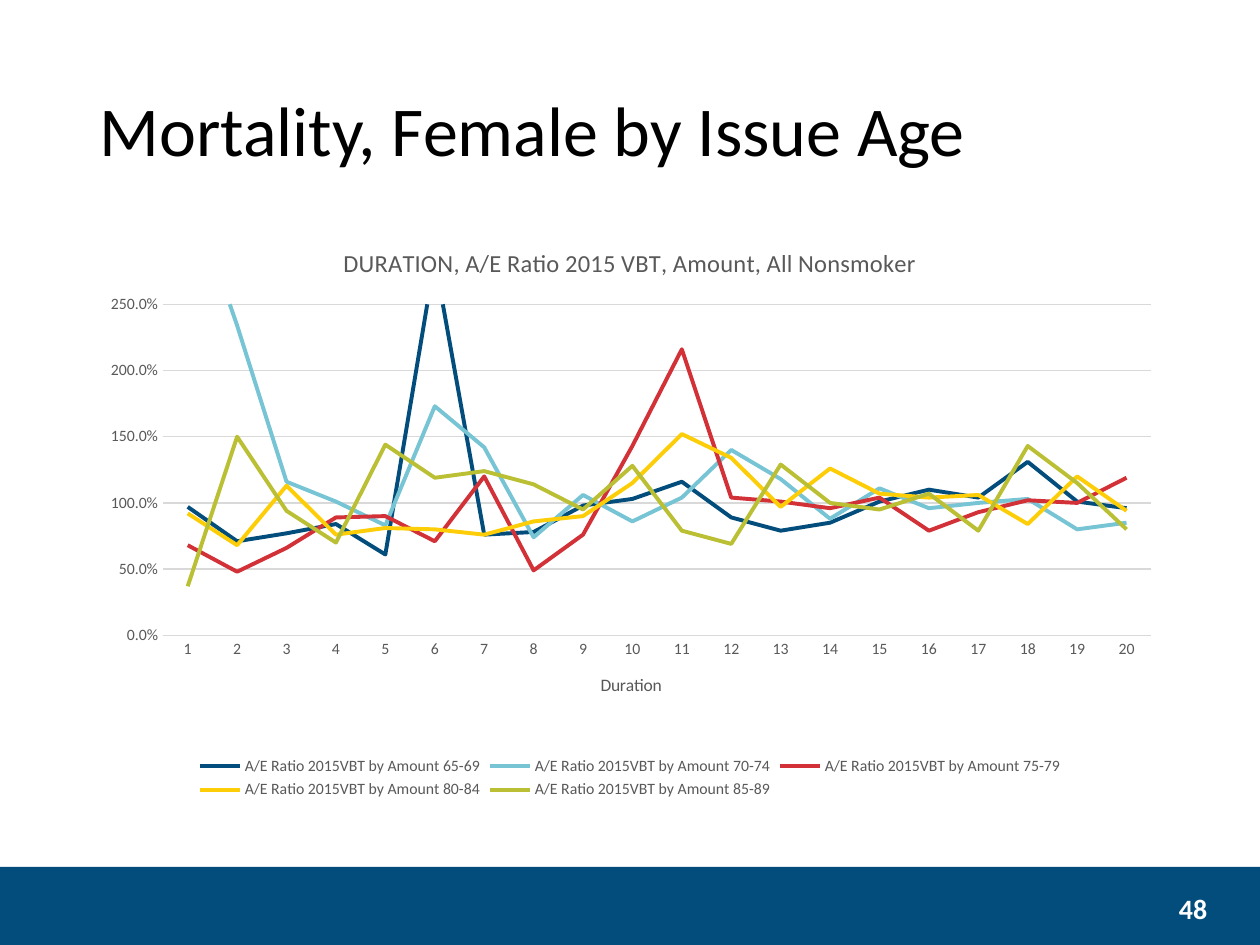
from dataclasses import dataclass

from lxml import etree
from pptx import Presentation
from pptx.chart.data import CategoryChartData
from pptx.dml.color import RGBColor
from pptx.enum.chart import XL_CHART_TYPE, XL_LEGEND_POSITION, XL_TICK_MARK
from pptx.enum.shapes import MSO_SHAPE
from pptx.enum.text import MSO_ANCHOR, PP_ALIGN
from pptx.oxml.ns import qn
from pptx.util import Inches, Pt

LINE = XL_CHART_TYPE.LINE
BOTTOM = XL_LEGEND_POSITION.BOTTOM
NO_TICK = XL_TICK_MARK.NONE
RECTANGLE = MSO_SHAPE.RECTANGLE
MIDDLE = MSO_ANCHOR.MIDDLE
LEFT, RIGHT = PP_ALIGN.LEFT, PP_ALIGN.RIGHT


@dataclass(frozen=True)
class Theme:
    font: str = "Calibri"
    black: str = "000000"
    white: str = "FFFFFF"
    gray: str = "595959"
    grid: str = "D9D9D9"
    navy: str = "024D7C"
    sky: str = "77C4D5"
    red: str = "D23138"
    yellow: str = "FDCE07"
    olive: str = "BABF33"
    title: float = 40
    page_number: float = 16
    chart_title: float = 14
    axis_title: float = 10
    label: float = 9
    series_line: float = 2.25
    thin_line: float = 0.75


THEME = Theme()

TITLE = "Mortality, Female by Issue Age"
PAGE_NUMBER = "48"
CHART_TITLE = "DURATION, A/E Ratio 2015 VBT, Amount, All Nonsmoker"
AXIS_TITLE = "Duration"
SERIES_PREFIX = "A/E Ratio 2015VBT by Amount"
RATIOS_BY_AGE = [
    ("65-69", THEME.navy, [0.97, 0.71, 0.77, 0.84, 0.61, 2.84, 0.76, 0.78, 0.98, 1.03,
                           1.16, 0.89, 0.79, 0.85, 1.01, 1.1, 1.04, 1.31, 1.01, 0.96]),
    ("70-74", THEME.sky, [3.42, 2.34, 1.16, 1.01, 0.83, 1.73, 1.42, 0.74, 1.06, 0.86,
                          1.04, 1.4, 1.18, 0.88, 1.11, 0.96, 1, 1.03, 0.8, 0.85]),
    ("75-79", THEME.red, [0.68, 0.48, 0.66, 0.89, 0.9, 0.71, 1.2, 0.49, 0.76, 1.43,
                          2.16, 1.04, 1.01, 0.96, 1.04, 0.79, 0.93, 1.02, 1, 1.19]),
    ("80-84", THEME.yellow, [0.92, 0.68, 1.13, 0.76, 0.81, 0.8, 0.76, 0.86, 0.9, 1.15,
                             1.52, 1.34, 0.97, 1.26, 1.07, 1.04, 1.06, 0.84, 1.2, 0.94]),
    ("85-89", THEME.olive, [0.37, 1.5, 0.94, 0.7, 1.44, 1.19, 1.24, 1.14, 0.95, 1.28,
                            0.79, 0.69, 1.29, 1, 0.95, 1.07, 0.79, 1.43, 1.15, 0.8]),
]

WIDTH, HEIGHT = 10, 7.5
MARGIN = 0.69
CONTENT_WIDTH = WIDTH - 2 * MARGIN
TITLE_TOP, TITLE_HEIGHT = 0.36, 1.4
CHART_TOP, CHART_HEIGHT = 1.77, 4.61
BAND_TOP = 6.88
NUMBER_BOX = (9.15, 7.1, 0.53, 0.22)
PLOT_SHARES = {"x": 0.07, "y": 0.14, "w": 0.91, "h": 0.57}


def inches(*lengths):
    return [Inches(length) for length in lengths]


def style_font(font, size, color, bold=False):
    font.name, font.size, font.bold = THEME.font, Pt(size), bold
    font.color.rgb = RGBColor.from_string(color)


def style_line(line, color, width):
    line.color.rgb = RGBColor.from_string(color)
    line.width = Pt(width)


def set_chart_text(text_frame, text, size):
    text_frame.text = text
    style_font(text_frame.paragraphs[0].runs[0].font, size, THEME.gray)


def place_plot(chart):
    """Fix the inner plot area as shares of the chart's size."""
    plot_area = chart._chartSpace.chart.plotArea
    for layout in plot_area.findall(qn("c:layout")):
        plot_area.remove(layout)
    layout = etree.Element(qn("c:layout"))
    manual = etree.SubElement(layout, qn("c:manualLayout"))
    settings = {"layoutTarget": "inner", "xMode": "edge", "yMode": "edge", **PLOT_SHARES}
    for name, value in settings.items():
        etree.SubElement(manual, qn(f"c:{name}")).set("val", str(value))
    plot_area.insert(0, layout)


def add_band(slide):
    band = slide.shapes.add_shape(
        RECTANGLE, *inches(0, BAND_TOP, WIDTH, HEIGHT - BAND_TOP))
    band.shadow.inherit = False
    band.fill.solid()
    band.fill.fore_color.rgb = RGBColor.from_string(THEME.navy)
    band.line.fill.background()


def format_title(slide):
    title = slide.shapes.title
    title.left, title.top, title.width, title.height = inches(
        MARGIN, TITLE_TOP, CONTENT_WIDTH, TITLE_HEIGHT)
    title.text_frame.text = TITLE
    title.text_frame.vertical_anchor = MIDDLE
    paragraph = title.text_frame.paragraphs[0]
    paragraph.alignment, paragraph.line_spacing = LEFT, 0.9
    style_font(paragraph.runs[0].font, THEME.title, THEME.black)


def add_page_number(slide):
    text_frame = slide.shapes.add_textbox(*inches(*NUMBER_BOX)).text_frame
    text_frame.word_wrap = True
    text_frame.vertical_anchor = MIDDLE
    text_frame.text = PAGE_NUMBER
    paragraph = text_frame.paragraphs[0]
    paragraph.alignment = RIGHT
    style_font(paragraph.runs[0].font, THEME.page_number, THEME.white, bold=True)


def add_mortality_chart(slide):
    data = CategoryChartData(number_format="0.0%")
    data.categories = [str(duration) for duration in range(1, 21)]
    for age, _, ratios in RATIOS_BY_AGE:
        data.add_series(f"{SERIES_PREFIX} {age}", ratios)
    frame = slide.shapes.add_chart(
        LINE, *inches(MARGIN, CHART_TOP, CONTENT_WIDTH, CHART_HEIGHT), data)
    chart = frame.chart
    style_font(chart.font, THEME.axis_title, THEME.black)
    chart.has_title = True
    set_chart_text(chart.chart_title.text_frame, CHART_TITLE, THEME.chart_title)
    chart.chart_title.include_in_layout = False

    chart.has_legend = True
    chart.legend.position = BOTTOM
    chart.legend.include_in_layout = False
    style_font(chart.legend.font, THEME.label, THEME.gray)

    durations, ratios_axis = chart.category_axis, chart.value_axis
    for axis in (durations, ratios_axis):
        axis.major_tick_mark = axis.minor_tick_mark = NO_TICK
        style_font(axis.tick_labels.font, THEME.label, THEME.gray)
    set_chart_text(durations.axis_title.text_frame, AXIS_TITLE, THEME.axis_title)
    style_line(durations.format.line, THEME.grid, THEME.thin_line)

    ratios_axis.minimum_scale, ratios_axis.maximum_scale = 0, 2.5
    ratios_axis.major_unit = 0.5
    ratios_axis.tick_labels.number_format = "0.0%"
    ratios_axis.tick_labels.number_format_is_linked = False
    ratios_axis.format.line.fill.background()
    style_line(ratios_axis.major_gridlines.format.line, THEME.grid, THEME.thin_line)

    plot = chart.plots[0]
    plot.vary_by_categories = False
    for series, (_, color, _) in zip(plot.series, RATIOS_BY_AGE):
        series.smooth = False
        style_line(series.format.line, color, THEME.series_line)
    place_plot(chart)


def main():
    presentation = Presentation()
    presentation.slide_width, presentation.slide_height = inches(WIDTH, HEIGHT)
    slide = presentation.slides.add_slide(presentation.slide_layouts[5])
    add_band(slide)
    format_title(slide)
    add_page_number(slide)
    add_mortality_chart(slide)
    presentation.save("out.pptx")


if __name__ == "__main__":
    main()
